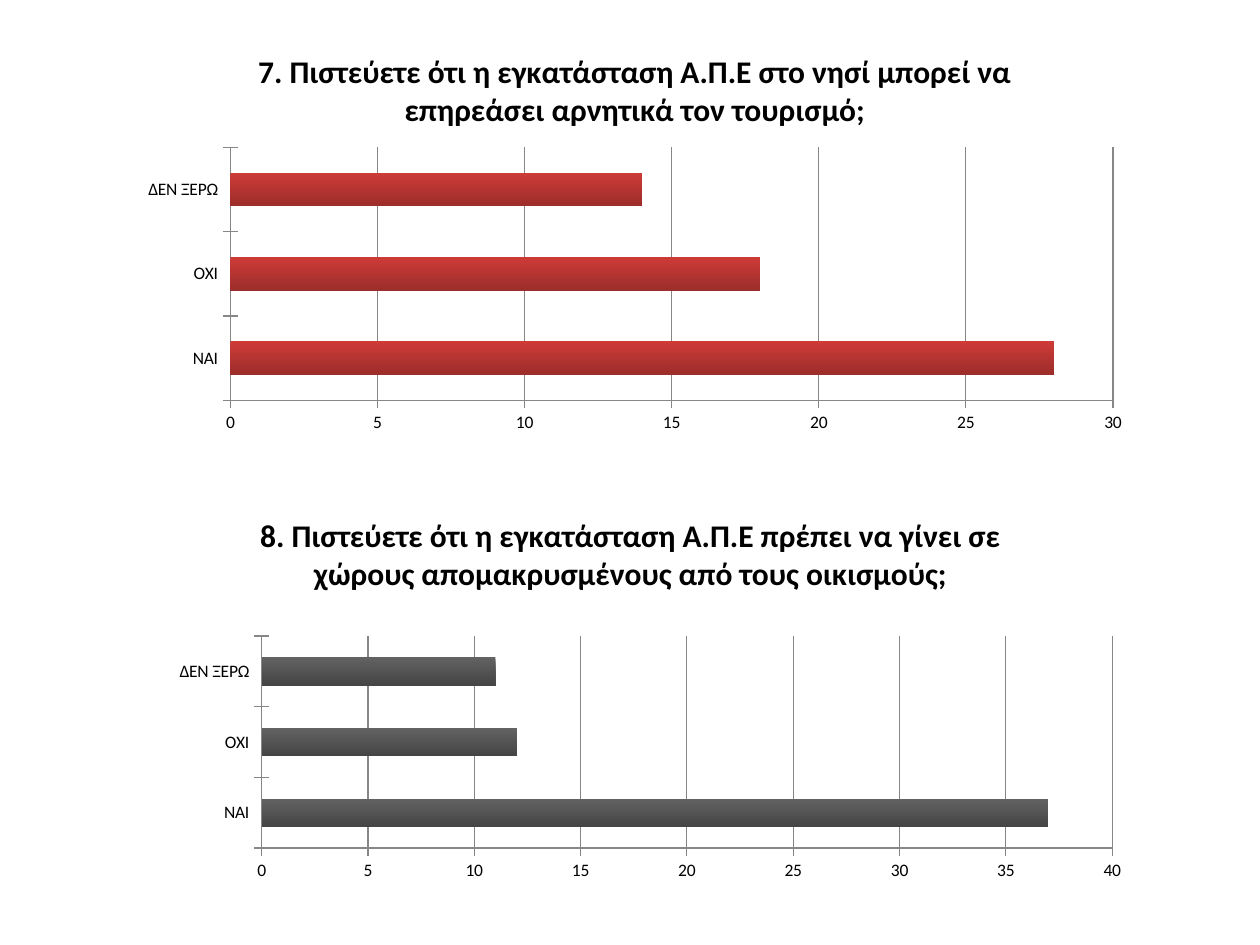
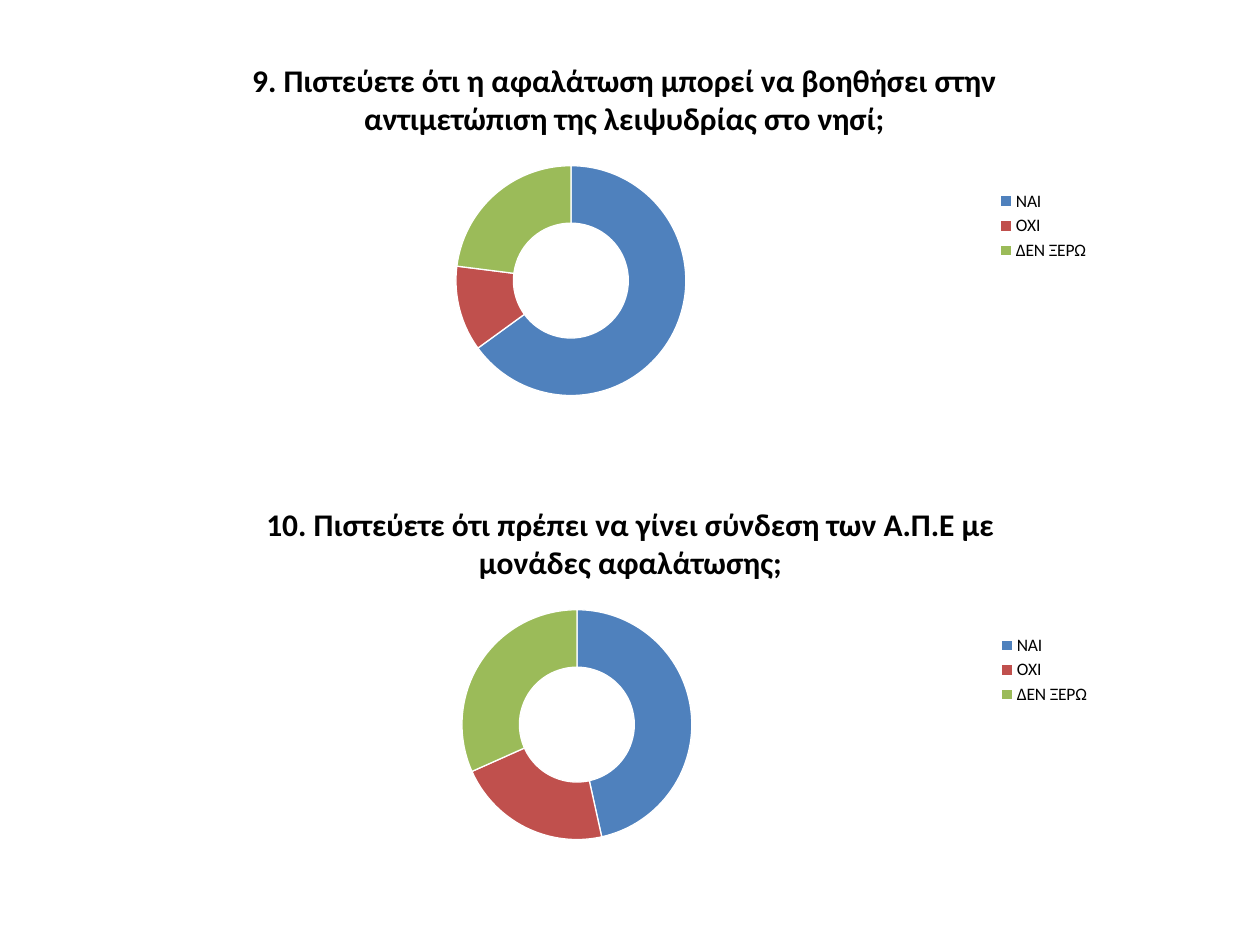
from dataclasses import dataclass

from pptx import Presentation
from pptx.chart.data import CategoryChartData
from pptx.dml.color import RGBColor
from pptx.enum.chart import XL_CHART_TYPE as ChartType
from pptx.enum.chart import XL_LEGEND_POSITION as LegendPosition
from pptx.enum.chart import XL_TICK_MARK as TickMark
from pptx.oxml import parse_xml
from pptx.oxml.ns import nsdecls, qn
from pptx.util import Pt

# Content: one list of questions per slide, boxes as left, top, width, height in px
ANSWERS = ("ΝΑΙ", "ΌΧΙ", "ΔΕΝ ΞΕΡΩ")
SURVEY = [
    [
        dict(question="7. Πιστεύετε ότι η εγκατάσταση Α.Π.Ε στο νησί μπορεί να "
                      "επηρεάσει αρνητικά τον τουρισμό;",
             votes=(28, 18, 14), box=(128, 29, 1014, 412),
             bars="red", scale_top=30),
        dict(question="8. Πιστεύετε ότι η εγκατάσταση Α.Π.Ε πρέπει να γίνει σε "
                      "χώρους απομακρυσμένους από τους οικισμούς;",
             votes=(37, 12, 11), box=(108, 493, 1045, 415),
             bars="grey", scale_top=40, plot=(262, 636, 851, 212)),
    ],
    [
        dict(question="9. Πιστεύετε ότι η αφαλάτωση μπορεί να βοηθήσει στην "
                      "αντιμετώπιση της λειψυδρίας στο νησί;",
             votes=(65, 12, 23), box=(147, 39, 955, 374)),
        dict(question="10. Πιστεύετε ότι πρέπει να γίνει σύνδεση των Α.Π.Ε με "
                      "μονάδες αφαλάτωσης;",
             votes=(47, 22, 32), box=(158, 483, 945, 374)),
    ],
]


@dataclass(frozen=True)
class Theme:
    font: str = "Calibri"
    title_size: int = 18
    label_size: int = 10
    text: str = "000000"
    rule: str = "878787"
    gap: str = "FFFFFF"
    slices: tuple = ("4F81BD", "C0504D", "9BBB59")
    red: tuple = ("CE3B37", "9B2D2A")
    grey: tuple = ("626262", "454545")


THEME = Theme()
SLIDE_SIZE = (1260, 945)
PX_PER_INCH = 126


def px(length):
    return round(length * 914400 / PX_PER_INCH)


def rgb(colour):
    return RGBColor.from_string(colour)


def style_font(font, size, bold):
    font.name, font.size, font.bold = THEME.font, Pt(size), bold
    font.color.rgb = rgb(THEME.text)


def style_line(line, colour):
    line.color.rgb = rgb(colour)
    line.width = Pt(0.75)


def place_plot(chart, box, plot):
    """Fix the inner plot area as fractions of the chart box."""
    left, top, width, height = box
    x, y, w, h = plot
    parts = dict(x=(x - left) / width, y=(y - top) / height,
                 w=w / width, h=h / height)
    modes = '<c:xMode val="edge"/><c:yMode val="edge"/>'
    sizes = "".join(f'<c:{key} val="{part:.3f}"/>' for key, part in parts.items())
    area = chart.element.find(".//" + qn("c:plotArea"))
    for layout in area.findall(qn("c:layout")):
        area.remove(layout)
    area.insert(0, parse_xml(
        f'<c:layout {nsdecls("c")}><c:manualLayout><c:layoutTarget val="inner"/>'
        f'{modes}{sizes}</c:manualLayout></c:layout>'))


def style_bars(chart, item):
    chart.has_legend = False
    chart.plots[0].gap_width = 150
    for axis in (chart.category_axis, chart.value_axis):
        axis.major_tick_mark = TickMark.CROSS
        style_line(axis.format.line, THEME.rule)
    scale = chart.value_axis
    scale.minimum_scale, scale.maximum_scale = 0, item["scale_top"]
    scale.major_unit = 5
    scale.has_major_gridlines = True
    style_line(scale.major_gridlines.format.line, THEME.rule)

    # Shaded bars, light at the top
    fill = chart.plots[0].series[0].format.fill
    fill.gradient()
    fill.gradient_angle = 270
    for stop, colour in zip(fill.gradient_stops, getattr(THEME, item["bars"])):
        stop.color.rgb = rgb(colour)
    if "plot" in item:
        place_plot(chart, item["box"], item["plot"])


def style_ring(chart):
    chart.has_legend = True
    chart.legend.position = LegendPosition.RIGHT
    chart.legend.include_in_layout = False
    ring = chart.plots[0].series[0]
    for index, colour in enumerate(THEME.slices):
        part = ring.points[index].format
        part.fill.solid()
        part.fill.fore_color.rgb = rgb(colour)
        style_line(part.line, THEME.gap)


def add_question(slide, item):
    is_bar = "bars" in item
    data = CategoryChartData()
    data.categories = ANSWERS
    data.add_series(item["question"], item["votes"])
    kind = ChartType.BAR_CLUSTERED if is_bar else ChartType.DOUGHNUT
    chart = slide.shapes.add_chart(kind, *map(px, item["box"]), data).chart
    style_font(chart.font, THEME.label_size, False)
    chart.plots[0].vary_by_categories = not is_bar

    # Question as the chart title
    chart.has_title = True
    chart.chart_title.include_in_layout = False
    run = chart.chart_title.text_frame.paragraphs[0].add_run()
    run.text = item["question"]
    style_font(run.font, THEME.title_size, True)

    if is_bar:
        style_bars(chart, item)
    else:
        style_ring(chart)


def main():
    deck = Presentation()
    deck.slide_width, deck.slide_height = map(px, SLIDE_SIZE)
    blank = deck.slide_layouts[6]
    for questions in SURVEY:
        slide = deck.slides.add_slide(blank)
        for item in questions:
            add_question(slide, item)
    deck.save("out.pptx")


if __name__ == "__main__":
    main()
